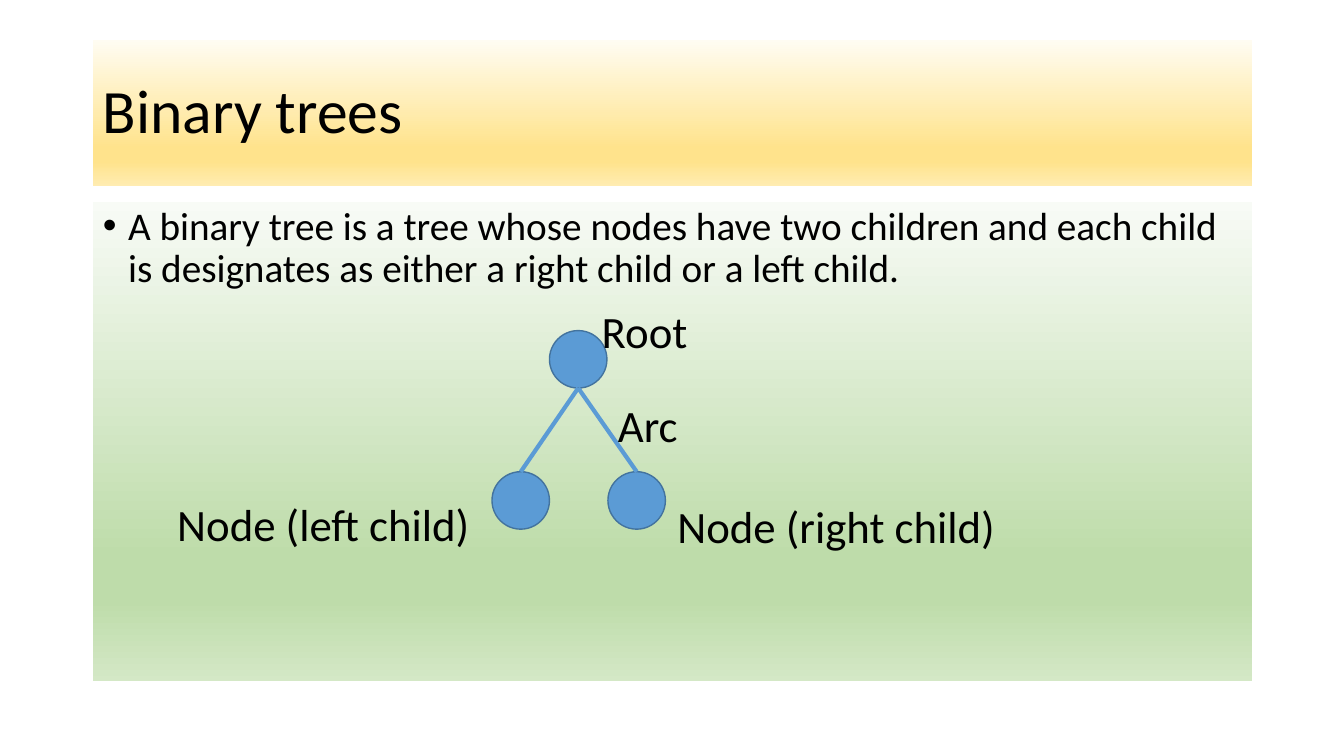
from lxml.etree import SubElement
from pptx import Presentation
from pptx.dml.color import RGBColor
from pptx.enum.shapes import MSO_CONNECTOR, MSO_SHAPE
from pptx.enum.text import MSO_ANCHOR, MSO_AUTO_SIZE, PP_ALIGN
from pptx.oxml.ns import qn
from pptx.util import Inches, Pt


def colour(code):
    return RGBColor.from_string(code)


class TreeSlide:
    font = "Calibri"
    ink = "000000"
    node_fill = "5B9BD5"
    node_line = "43739E"
    node_size = 0.57

    def __init__(self, deck):
        self.page = deck.slides.add_slide(deck.slide_layouts[1])

    def add_span(self, para, text, size):
        span = para.add_run()
        span.text = text
        span.font.name = self.font
        span.font.size = Pt(size)
        span.font.color.rgb = colour(self.ink)

    def placeholder(self, index, place, stops, text, size, anchor):
        box = self.page.placeholders[index]
        box.left, box.top, box.width, box.height = map(Inches, place)
        self.gradient(box, stops)
        frame = box.text_frame
        frame.word_wrap = True
        frame.auto_size = MSO_AUTO_SIZE.NONE
        frame.vertical_anchor = anchor
        para = frame.paragraphs[0]
        para.alignment = PP_ALIGN.LEFT
        para.line_spacing = 0.9
        self.add_span(para, text, size)
        return para

    def gradient(self, box, stops):
        box.fill.gradient()
        box.fill.gradient_angle = 270
        stop_list = next(box._element.spPr.iter(qn("a:gsLst")))
        stop_list.clear()
        for percent, code in stops:
            stop = SubElement(stop_list, qn("a:gs"), pos=str(percent * 1000))
            SubElement(stop, qn("a:srgbClr"), val=code)

    def bullet(self, para):
        para.space_before = Pt(10)
        properties = para._p.get_or_add_pPr()
        properties.set("marL", str(Inches(0.25)))
        properties.set("indent", str(Inches(-0.25)))
        SubElement(properties, qn("a:buFont"), typeface="Arial")
        SubElement(properties, qn("a:buChar"), char="•")

    def node(self, left, top):
        size = Inches(self.node_size)
        circle = self.page.shapes.add_shape(
            MSO_SHAPE.OVAL, Inches(left), Inches(top), size, size)
        circle.shadow.inherit = False
        circle.fill.solid()
        circle.fill.fore_color.rgb = colour(self.node_fill)
        circle.line.color.rgb = colour(self.node_line)
        circle.line.width = Pt(1)
        return circle

    def arc(self, parent, child):
        line = self.page.shapes.add_connector(
            MSO_CONNECTOR.STRAIGHT,
            parent.left + parent.width // 2, parent.top + parent.height,
            child.left + child.width // 2, child.top)
        line.end_connect(child, 0)
        line.line.color.rgb = colour(self.node_fill)
        line.line.width = Pt(3)
        SubElement(line._element.spPr, qn("a:effectLst"))

    def label(self, text, left, top, width):
        box = self.page.shapes.add_textbox(
            Inches(left), Inches(top), Inches(width), Inches(0.64))
        box.text_frame.word_wrap = False
        box.text_frame.auto_size = MSO_AUTO_SIZE.SHAPE_TO_FIT_TEXT
        self.add_span(box.text_frame.paragraphs[0], text, 32)


def main():
    deck = Presentation()
    deck.slide_width, deck.slide_height = Inches(13.33), Inches(7.5)
    slide = TreeSlide(deck)

    # Title and definition
    slide.placeholder(
        0, (0.92, 0.4, 11.5, 1.45),
        [(0, "FFFCF2"), (74, "FFE38C"), (83, "FFE38C"), (100, "FFECB2")],
        "Binary trees", 44, MSO_ANCHOR.MIDDLE)
    definition = slide.placeholder(
        1, (0.92, 2, 11.5, 4.76),
        [(0, "F8FBF6"), (74, "BEDCAA"), (83, "BEDCAA"), (100, "D4E8C6")],
        "A binary tree is a tree whose nodes have two children and each child "
        "is designates as either a right child or a left child.",
        28, MSO_ANCHOR.TOP)
    slide.bullet(definition)

    # Tree: a root above two children
    root = slide.node(5.45, 3.28)
    children = [slide.node(left, 4.68) for left in (4.88, 6.03)]
    for child in children:
        slide.arc(root, child)

    # Labels
    for text, left, top, width in (
            ("Root", 5.87, 2.96, 1.06),
            ("Arc", 6.03, 3.9, 0.8),
            ("Node (right child)", 6.62, 4.9, 3.39),
            ("Node (left child)", 1.66, 4.88, 3.14)):
        slide.label(text, left, top, width)

    deck.save("out.pptx")


if __name__ == "__main__":
    main()
